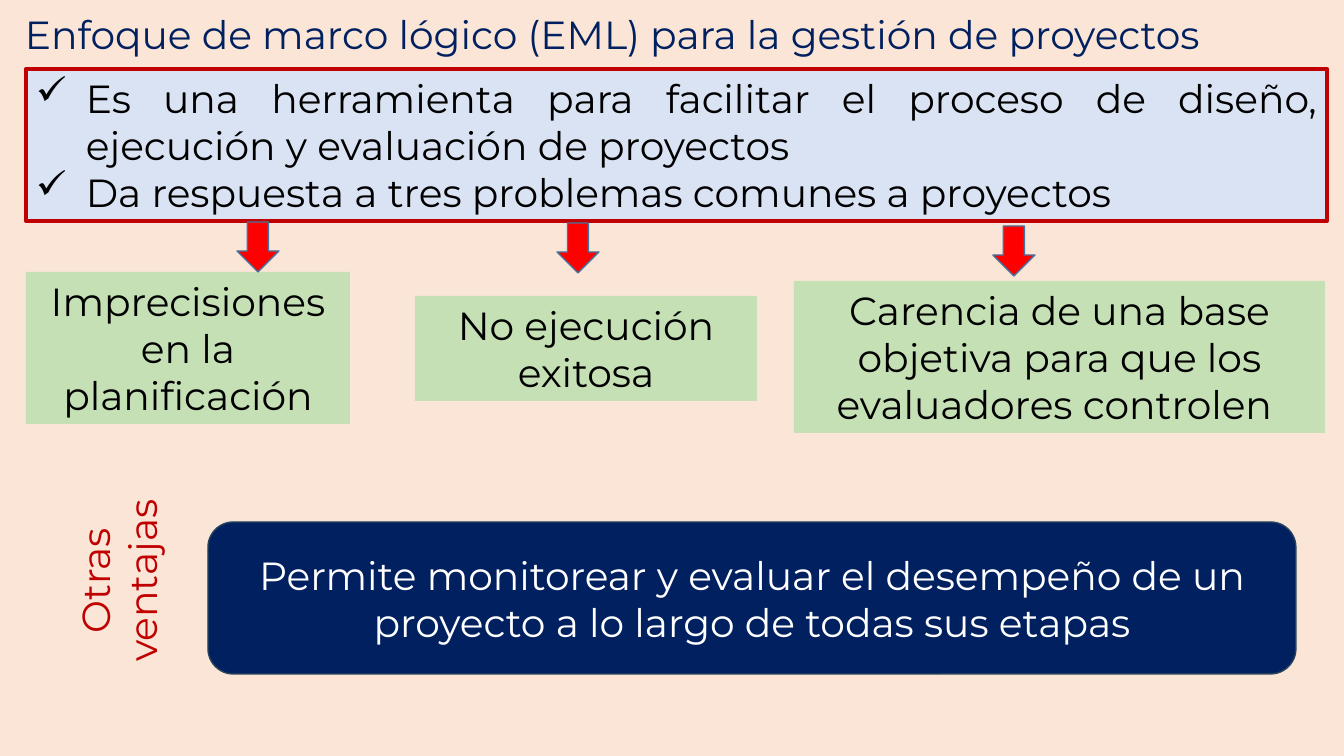
from pptx import Presentation
from pptx.dml.color import RGBColor
from pptx.enum.shapes import MSO_SHAPE
from pptx.enum.text import MSO_ANCHOR, MSO_AUTO_SIZE, PP_ALIGN
from pptx.oxml.ns import qn
from pptx.util import Emu, Pt
from lxml import etree

RECT, ROUND, DOWN = MSO_SHAPE.RECTANGLE, MSO_SHAPE.ROUNDED_RECTANGLE, MSO_SHAPE.DOWN_ARROW
LEFT, MID, JUST = PP_ALIGN.LEFT, PP_ALIGN.CENTER, PP_ALIGN.JUSTIFY
TOP, CENTER = MSO_ANCHOR.TOP, MSO_ANCHOR.MIDDLE
GROW, FIXED = MSO_AUTO_SIZE.SHAPE_TO_FIT_TEXT, MSO_AUTO_SIZE.NONE

TITLE = "Enfoque de marco lógico (EML) para la gestión de proyectos"
POINTS = [
    "Es una herramienta para facilitar el proceso de diseño, ejecución y evaluación de proyectos",
    "Da respuesta a tres problemas comunes a proyectos ",
]
CARDS = [
    ("Imprecisiones en la planificación", (26, 272, 324, 152), (237, 222)),
    ("No ejecución exitosa", (415, 296, 342, 105), (557, 223)),
    ("Carencia de una base objetiva para que los evaluadores controlen ",
     (794, 281, 531, 152), (993, 226)),
]
ARROW = (42, 50)
SIDE = "Otras ventajas"
BANNER = "Permite monitorear y evaluar el desempeño de un proyecto a lo largo de todas sus etapas"

THEME = {
    "font": "Montserrat", "size": 28,
    "back": "FBE5D6", "navy": "002060", "red": "C00000", "black": "000000",
    "white": "FFFFFF", "pale": "DAE3F3", "green": "C5E0B4",
    "arrow": "FF0000", "edge": "43739E", "rim": "28445D",
}
WIDE, HIGH = 1344, 756
INDENT = 50
UNIT = 914400 / 100.8


def px(n):
    return Emu(round(n * UNIT))


def tone(name):
    return RGBColor.from_string(THEME[name])


def draw(kind, box, fill, line=None, width=1):
    shape = slide.shapes.add_shape(kind, *map(px, box))
    shape.shadow.inherit = False
    shape.fill.solid()
    shape.fill.fore_color.rgb = tone(fill)
    if line:
        shape.line.color.rgb = tone(line)
        shape.line.width = Pt(width)
    else:
        shape.line.fill.background()
    return shape


def label(box):
    return slide.shapes.add_textbox(*map(px, box))


def write(shape, lines, color, align=MID, mark=None, anchor=TOP, fit=GROW):
    frame = shape.text_frame
    frame.text = "\n".join(lines)
    frame.word_wrap = True
    frame.auto_size = fit
    frame.vertical_anchor = anchor
    for para in frame.paragraphs:
        para.alignment = align
        if mark:
            props = para._p.get_or_add_pPr()
            props.set("marL", str(px(INDENT)))
            props.set("indent", str(-px(INDENT)))
            etree.SubElement(props, qn("a:buChar"), char=mark)
        for run in para.runs:
            run.font.name = THEME["font"]
            run.font.size = Pt(THEME["size"])
            run.font.color.rgb = tone(color)


deck = Presentation()
deck.slide_width, deck.slide_height = px(WIDE), px(HIGH)
slide = deck.slides.add_slide(deck.slide_layouts[6])

draw(RECT, (0, 0, WIDE, HIGH), "back")
write(label((15, 5, 1328, 57)), [TITLE], "navy", LEFT)
write(draw(RECT, (26, 69, 1301, 152), "pale", "red", 3), POINTS, "black", JUST, "✓")

for text, box, spot in CARDS:
    write(draw(RECT, box, "green"), [text], "black")
    draw(DOWN, spot + ARROW, "arrow", "edge")

side = label((9, 528, 219, 105))
side.rotation = 270
write(side, [SIDE], "red")
write(draw(ROUND, (208, 522, 1088, 152), "navy", "rim"), [BANNER], "white",
      anchor=CENTER, fit=FIXED)

deck.save("out.pptx")
